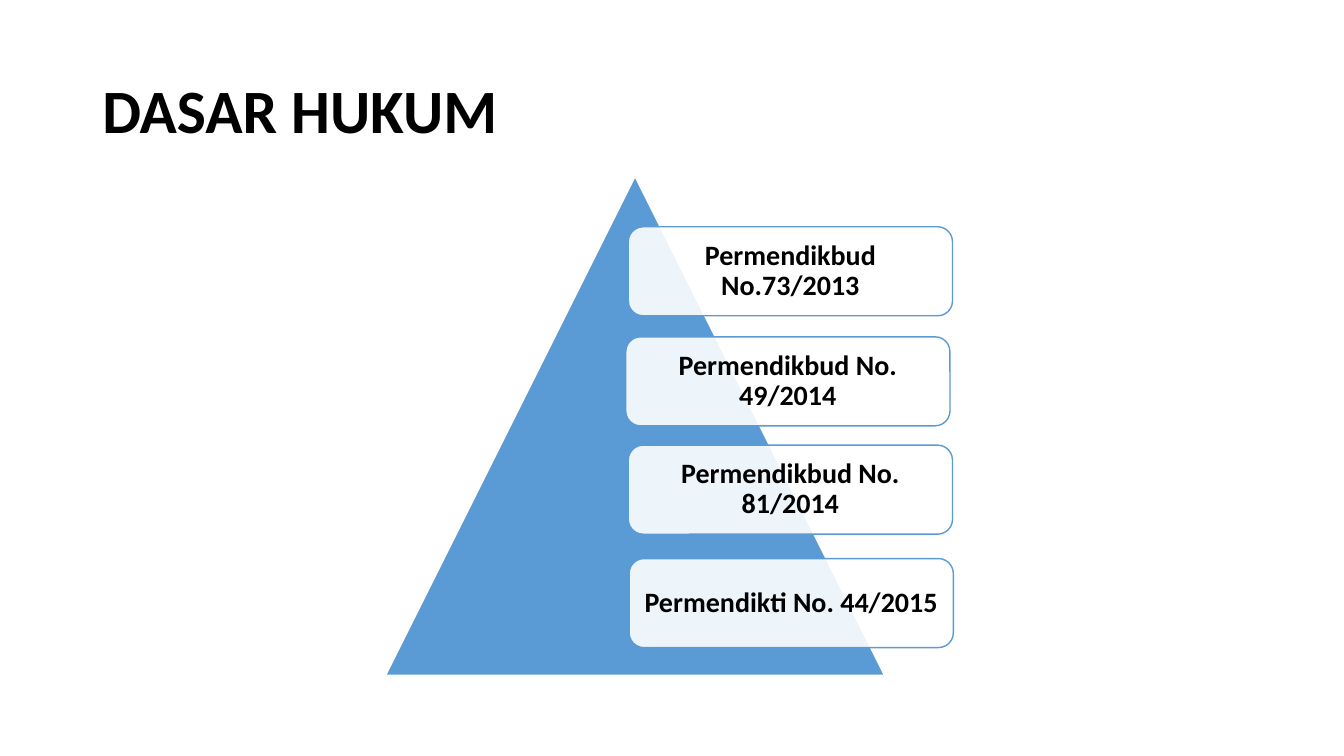
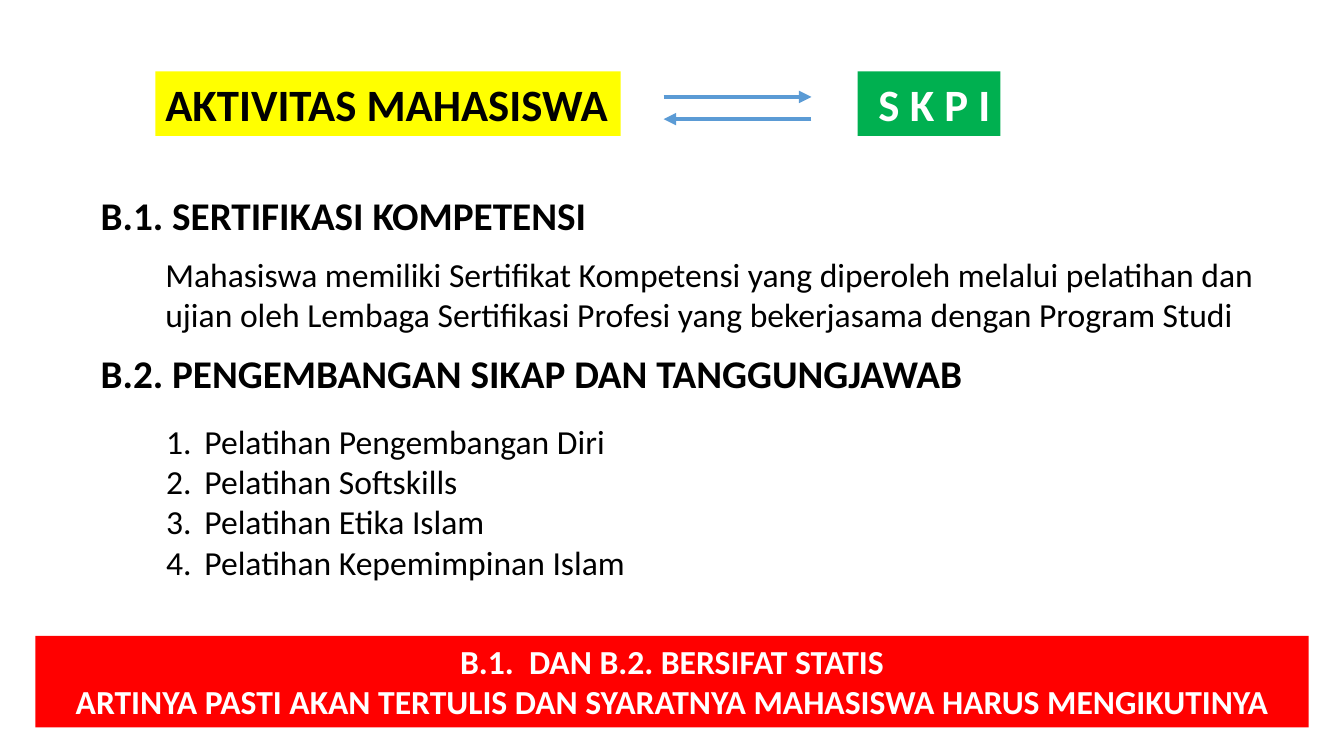
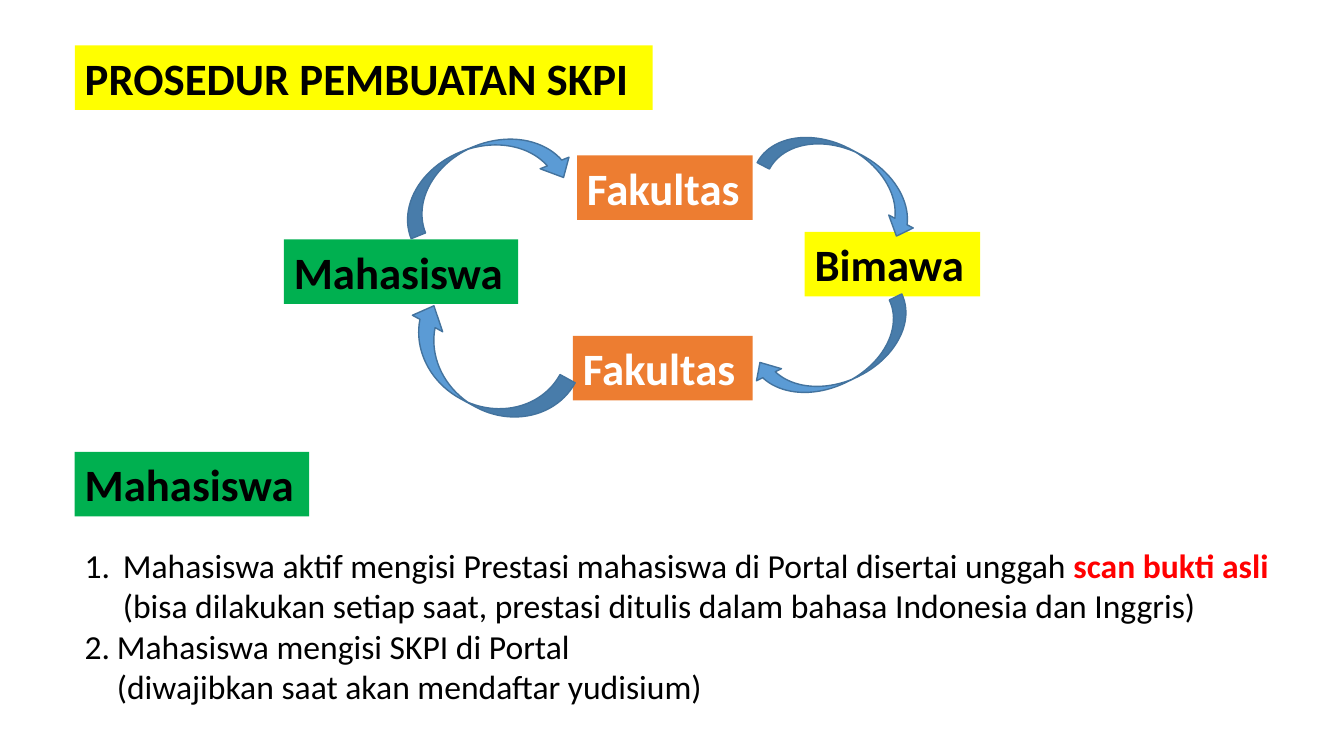
from dataclasses import dataclass
from lxml.etree import SubElement as Sub
from pptx import Presentation
from pptx.dml.color import RGBColor as Rgb
from pptx.enum.shapes import MSO_CONNECTOR as Link, MSO_SHAPE as Kind
from pptx.enum.text import MSO_ANCHOR as Anchor, PP_ALIGN as Align
from pptx.oxml.ns import qn
from pptx.util import Emu, Inches, Pt

COLS, ROWS = 80, 45
CELL = Inches(1) // 6
FONT = "Calibri"
BLACK, WHITE, RED = "000000", "FFFFFF", "FF0000"
BLUE, NAVY, GREEN = "5B9BD5", "43739E", "00B050"
YELLOW, ORANGE = "FFFF00", "ED7D31"
TAG = {"size": Pt(32), "bold": True}
HEAD = {"size": Pt(28), "bold": True}
BODY = {"size": Pt(24), "bold": False}
STRONG = {"size": Pt(24), "bold": True}
CARD = {"size": Pt(20), "bold": True}
TITLE = {"size": Pt(44), "bold": True}
TAG_H = 3.84


@dataclass
class Para:
    text: str
    left: float = 0
    num: int = 0
    alert: str = ""


def grid(*cells):
    return [Emu(round(c * CELL)) for c in cells]


def tint(color, value):
    color.rgb = Rgb.from_string(value)


def put(thing, values):
    for name, value in values.items():
        setattr(thing, name, value)


def paint(shape, fill, line=None, alpha=None):
    shape.fill.solid()
    tint(shape.fill.fore_color, fill)
    if alpha:
        node = shape.fill._xPr.find(qn("a:solidFill"))[0]
        Sub(node, qn("a:alpha"), val=str(alpha * 1000))
    if line:
        tint(shape.line.color, line)
        shape.line.width = Pt(1)


def write(frame, paras, look, color=BLACK, form=None):
    frame.word_wrap = True
    for i, item in enumerate(paras):
        item = Para(item) if isinstance(item, str) else item
        para = frame.add_paragraph() if i else frame.paragraphs[0]
        put(para, form or {"alignment": Align.LEFT})
        for text, hue in ((item.text, color), (item.alert, RED)):
            if text:
                run = para.add_run()
                run.text = text
                put(run.font, {"name": FONT, **look})
                tint(run.font.color, hue)
                if hue == RED:
                    run.font.bold = True
        if item.left:
            props = para._p.get_or_add_pPr()
            left = Inches(item.left)
            props.set("marL", str(left))
            if item.num:
                props.set("indent", str(-left))
                Sub(props, qn("a:buFont"), typeface="+mj-lt")
                Sub(props, qn("a:buAutoNum"), type="arabicPeriod",
                    startAt=str(item.num))


def note(slide, box, paras, look=BODY, color=BLACK, fill=None, form=None):
    shape = slide.shapes.add_textbox(*grid(*box))
    if fill:
        paint(shape, fill)
    write(shape.text_frame, paras, look, color, form)
    return shape


def tag(slide, x, y, wide, text, fill, color=BLACK, form=None):
    note(slide, (x, y, wide, TAG_H), [text], TAG, color, fill, form)


def draw(slide, kind, box, fill, line, alpha=None, turn=0):
    shape = slide.shapes.add_shape(kind, *grid(*box))
    put(shape, {"rotation": turn})
    shape.shadow.inherit = False
    paint(shape, fill, line, alpha)
    return shape


def card(slide, x, y, text):
    shape = draw(slide, Kind.ROUNDED_RECTANGLE, (x, y, 19.3, 5.3),
                 WHITE, BLUE, 90)
    frame = shape.text_frame
    sides = ("left", "right", "top", "bottom")
    put(frame, {f"margin_{s}": Inches(0.08) for s in sides})
    frame.vertical_anchor = Anchor.MIDDLE
    write(frame, [text], CARD,
          form={"alignment": Align.CENTER, "line_spacing": 0.9})


def arrow(slide, start, end, y):
    line = slide.shapes.add_connector(Link.STRAIGHT, *grid(start, y, end, y))
    tint(line.line.color, BLUE)
    line.line.width = Pt(3)
    Sub(line.line._get_or_add_ln(), qn("a:tailEnd"), type="triangle")
    Sub(line._element.spPr, qn("a:effectLst"))


def curve(slide, box, turn):
    shape = draw(slide, Kind.CURVED_DOWN_ARROW, box, BLUE, NAVY, turn=turn)
    for i, value in enumerate((0.25, 0.5, 0.27)):
        shape.adjustments[i] = value


def legal(slide):
    title = note(slide, (5.5, 2.4, 69, 8.7), ["DASAR HUKUM"], TITLE,
                 form={"line_spacing": 0.9})
    title.text_frame.vertical_anchor = Anchor.MIDDLE
    draw(slide, Kind.ISOSCELES_TRIANGLE, (22.95, 10.5, 29.7, 29.7),
         BLUE, WHITE)
    for x, y, text in (
        (37.4, 13.5, "Permendikbud No.73/2013"),
        (37.25, 20.05, "Permendikbud No. 49/2014"),
        (37.4, 26.5, "Permendikbud No. 81/2014"),
        (37.45, 33.25, "Permendikti No. 44/2015"),
    ):
        card(slide, x, y, text)


def active(slide):
    tag(slide, 9.25, 4.25, 27.7, "AKTIVITAS MAHASISWA", YELLOW)
    tag(slide, 51.05, 4.25, 8.5, "S K P I", GREEN, WHITE,
        {"alignment": Align.RIGHT})
    arrow(slide, 39.5, 48.3, 5.77)
    arrow(slide, 48.3, 39.5, 7.09)
    for y, text in (
        (11.1, "B.1. SERTIFIKASI KOMPETENSI"),
        (20.5, "B.2. PENGEMBANGAN SIKAP DAN TANGGUNGJAWAB"),
    ):
        note(slide, (5.4, y, 55, 3.4), [text], HEAD)
    note(slide, (9.25, 14.8, 67.25, 5.45), [
        "Mahasiswa memiliki Sertifikat Kompetensi yang diperoleh melalui "
        "pelatihan dan ujian oleh Lembaga Sertifikasi Profesi yang "
        "bekerjasama dengan Program Studi"])
    skills = ("Pengembangan Diri", "Softskills", "Etika Islam",
              "Kepemimpinan Islam")
    note(slide, (9.3, 24.75, 29.5, 10.3),
         [Para(f"Pelatihan {skill}", 0.38, 1) for skill in skills])
    note(slide, (2.1, 37.85, 75.8, 5.45), [
        "B.1.  DAN B.2. BERSIFAT STATIS",
        "ARTINYA PASTI AKAN TERTULIS DAN SYARATNYA MAHASISWA HARUS "
        "MENGIKUTINYA",
    ], STRONG, WHITE, RED, {"alignment": Align.CENTER})


def steps(slide):
    for x, y, wide, text, fill, color in (
        (4.45, 2.7, 34.4, "PROSEDUR PEMBUATAN SKPI", YELLOW, BLACK),
        (47.9, 13.8, 10.45, "Bimawa", YELLOW, BLACK),
        (34.1, 20, 10.7, "Fakultas", ORANGE, WHITE),
        (34.35, 9.25, 10.45, "Fakultas", ORANGE, WHITE),
        (16.9, 14.25, 13.95, "Mahasiswa", GREEN, BLACK),
        (4.45, 26.9, 13.95, "Mahasiswa", GREEN, BLACK),
    ):
        tag(slide, x, y, wide, text, fill, color)
    for box, turn in (
        ((23.4, 8.65, 10.7, 3.7), 338.1),
        ((45.25, 8.95, 10.2, 3.3), 27.8),
        ((44.7, 19.55, 10.2, 3.3), 154.2),
        ((23.3, 20, 10.6, 4.1), 208.6),
    ):
        curve(slide, box, turn)
    note(slide, (4.45, 32.15, 73.1, 10.3), [
        Para("Mahasiswa aktif mengisi Prestasi mahasiswa di Portal "
             "disertai unggah ", 0.38, 1, "scan bukti asli"),
        Para("(bisa dilakukan setiap saat, prestasi ditulis dalam bahasa "
             "Indonesia dan Inggris)", 0.38),
        Para("Mahasiswa mengisi SKPI di Portal", 0.32, 2),
        Para("(diwajibkan saat akan mendaftar yudisium)", 0.32),
    ])


def main():
    deck = Presentation()
    put(deck, {"slide_width": COLS * CELL, "slide_height": ROWS * CELL})
    for build in (legal, active, steps):
        build(deck.slides.add_slide(deck.slide_layouts[6]))
    deck.save("out.pptx")


if __name__ == "__main__":
    main()
